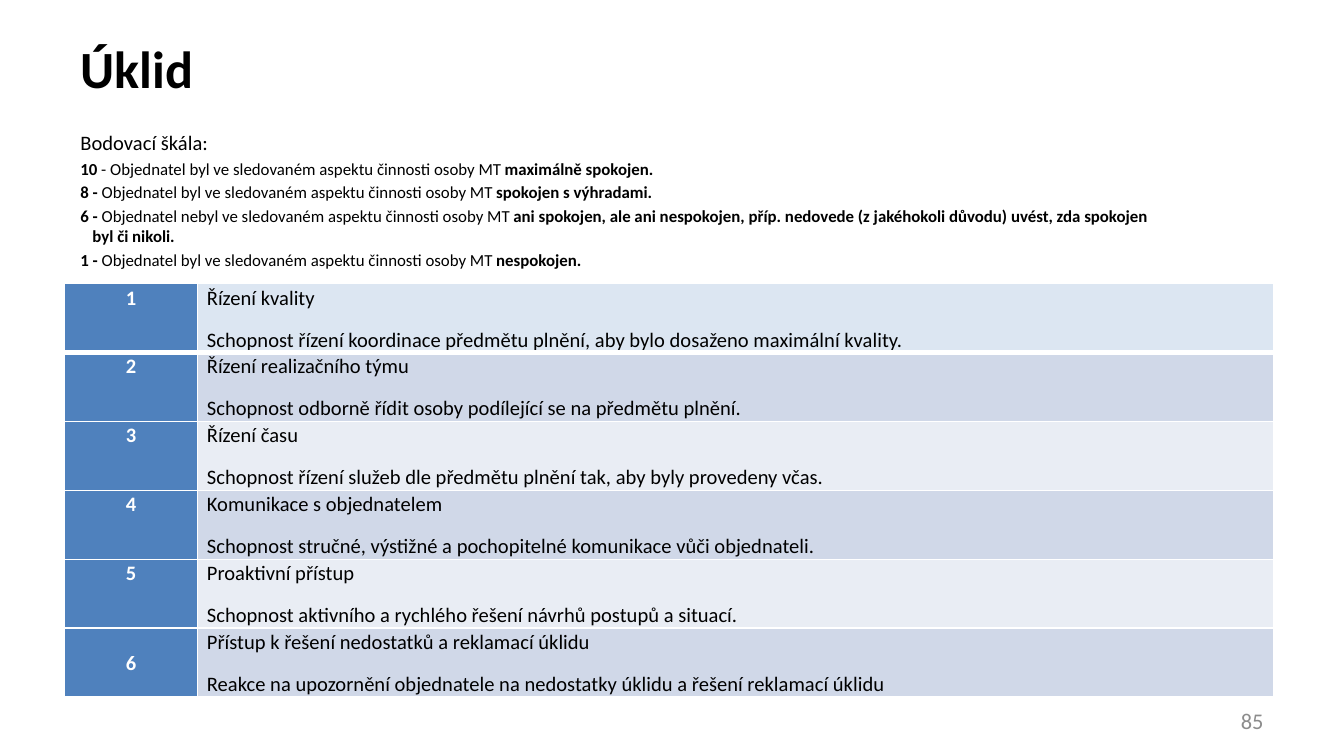
from lxml import etree
from pptx import Presentation
from pptx import util as u
from pptx.dml.color import RGBColor
from pptx.enum import text
from pptx.oxml.ns import qn

FONT = "Calibri"
COLORS = {"text": "000000", "white": "FFFFFF", "number": "4F81BD", "first": "DCE6F2",
          "even": "D0D8E8", "odd": "E9EDF4", "page": "8C8C8C"}
TITLE = "Úklid"
PAGE = "85"
SCALE_TITLE = "Bodovací škála:"
SCALE = [
    [("10", True), (" - Objednatel byl ve sledovaném aspektu činnosti osoby MT ", False),
     ("maximálně spokojen.", True)],
    [("8 - ", True), ("Objednatel byl ve sledovaném aspektu činnosti osoby MT ", False),
     ("spokojen s výhradami.", True)],
    [("6 - ", True), ("Objednatel nebyl ve sledovaném aspektu činnosti osoby MT ", False),
     ("ani spokojen, ale ani nespokojen, příp. nedovede (z jakéhokoli důvodu) uvést, "
      "zda spokojen byl či nikoli.", True)],
    [("1 - ", True), ("Objednatel byl ve sledovaném aspektu činnosti osoby MT ", False),
     ("nespokojen.", True)],
]
CRITERIA = [
    ("Řízení kvality",
     "Schopnost řízení koordinace předmětu plnění, aby bylo dosaženo maximální kvality."),
    ("Řízení realizačního týmu",
     "Schopnost odborně řídit osoby podílející se na předmětu plnění."),
    ("Řízení času",
     "Schopnost řízení služeb dle předmětu plnění tak, aby byly provedeny včas."),
    ("Komunikace s objednatelem",
     "Schopnost stručné, výstižné a pochopitelné komunikace vůči objednateli."),
    ("Proaktivní přístup",
     "Schopnost aktivního a rychlého řešení návrhů postupů a situací."),
    ("Přístup k řešení nedostatků a reklamací úklidu",
     "Reakce na upozornění objednatele na nedostatky úklidu a řešení reklamací úklidu"),
]
COLUMNS = [0.99, 8.01]


def style(font, size, color="text", bold=False):
    font.name, font.size, font.bold = FONT, u.Pt(size), bold
    font.color.rgb = RGBColor.from_string(COLORS[color])


def add_box(s, x, y, w, h, anchor=text.MSO_ANCHOR.MIDDLE):
    tf = s.shapes.add_textbox(*map(u.Inches, (x, y, w, h))).text_frame
    tf.word_wrap = True
    tf.vertical_anchor = anchor
    return tf


def add_line(s, content, size, color="text", bold=False, align=None, box=None):
    tf = add_box(s, *box)
    tf.text = content
    p = tf.paragraphs[0]
    p.alignment = align
    style(p.runs[0].font, size, color, bold)
    return tf


def set_borders(cell, widths):
    tcPr = cell._tc.get_or_add_tcPr()
    for i, (side, width) in enumerate(widths.items()):
        ln = etree.Element(qn(f"a:ln{side}"), w=str(u.Pt(width)))
        fill = etree.SubElement(ln, qn("a:solidFill"))
        etree.SubElement(fill, qn("a:srgbClr"), val=COLORS["white"])
        tcPr.insert(i, ln)


def fill_cell(cell, lines, fill, color, bold, align, row):
    cell.margin_left = cell.margin_right = u.Inches(0.07)
    cell.margin_top = cell.margin_bottom = 0
    last = row == len(CRITERIA) - 1
    cell.vertical_anchor = text.MSO_ANCHOR.MIDDLE if last else text.MSO_ANCHOR.TOP
    cell.text_frame.text = "\n".join(lines)
    for p in cell.text_frame.paragraphs:
        p.alignment, p.line_spacing, p.space_after = align, 1.07, u.Pt(8)
        style(p.runs[0].font, 11, color, bold)
    cell.fill.solid()
    cell.fill.fore_color.rgb = RGBColor.from_string(COLORS[fill])
    set_borders(cell, {"L": 1, "R": 1, "T": 3 if row == 1 else 1, "B": 3 if row == 0 else 1})


def add_scale(s):
    tf = add_line(s, SCALE_TITLE, 11, box=(0.5, 0.92, 8.16, 4.1, text.MSO_ANCHOR.TOP))
    for parts in SCALE:
        p = tf.add_paragraph()
        p.space_before = u.Pt(1.8)
        pPr = p._p.get_or_add_pPr()
        pPr.set("marL", str(u.Inches(0.09)))
        pPr.set("indent", str(u.Inches(-0.09)))
        for content, bold in parts:
            r = p.add_run()
            r.text = content
            style(r.font, 9, bold=bold)


def add_criteria(s):
    table = s.shapes.add_table(len(CRITERIA), 2, *map(u.Inches, (0.48, 2.11, 9, 3.08))).table
    for column, width in zip(table.columns, COLUMNS):
        column.width = u.Inches(width)
    for i, lines in enumerate(CRITERIA):
        fill = "first" if i == 0 else ("odd", "even")[i % 2]
        fill_cell(table.cell(i, 0), [str(i + 1)], "number", "white", True,
                  text.PP_ALIGN.CENTER, i)
        fill_cell(table.cell(i, 1), lines, fill, "text", False, text.PP_ALIGN.LEFT, i)


def main():
    prs = Presentation()
    prs.slide_width = u.Inches(10)
    prs.slide_height = prs.slide_width * 9 // 16
    s = prs.slides.add_slide(prs.slide_layouts[6])
    add_line(s, TITLE, 28, bold=True, box=(0.5, 0.23, 9, 0.54))
    add_scale(s)
    add_line(s, PAGE, 12, "page", align=text.PP_ALIGN.RIGHT, box=(7.17, 5.21, 2.33, 0.3))
    add_criteria(s)
    prs.save("out.pptx")


if __name__ == "__main__":
    main()
